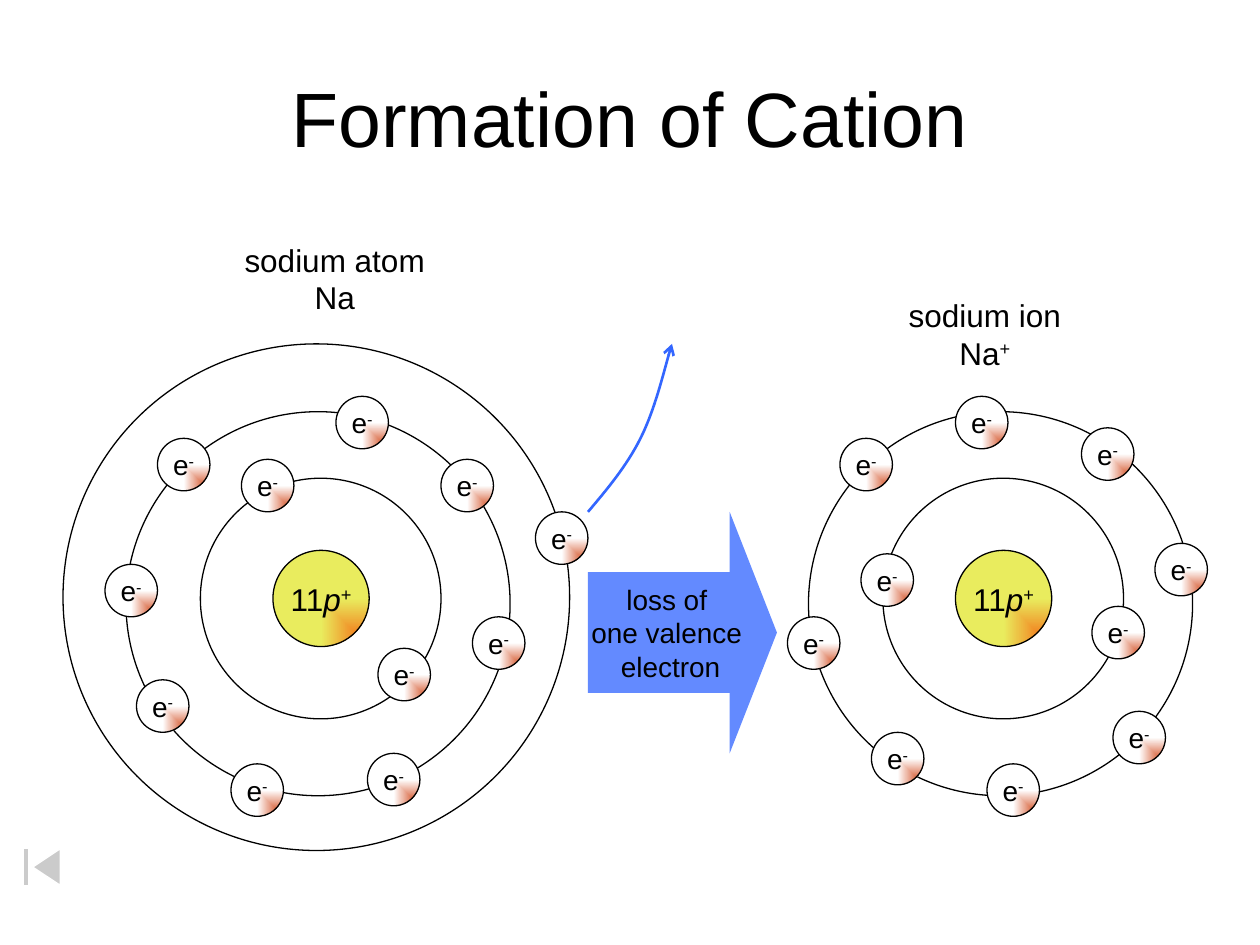
from dataclasses import dataclass

from lxml.etree import SubElement
from pptx import Presentation
from pptx.dml.color import RGBColor
from pptx.enum.shapes import MSO_SHAPE as Preset
from pptx.enum.text import MSO_ANCHOR as Anchor, MSO_AUTO_SIZE as AutoSize, PP_ALIGN as Align
from pptx.oxml.ns import qn
from pptx.util import Pt


@dataclass(frozen=True)
class Theme:
    font: str = "Arial"
    ink: str = "000000"
    paper: str = "FFFFFF"
    blue: str = "3366FF"
    electron: tuple = ("CC3300", "FFFFFF")
    nucleus: tuple = ("F55F0B", "E9EC5E")
    title_size: float = 44
    label_size: float = 18
    small_size: float = 16
    outline: float = 0.75
    curve: float = 1.5


def write_text(shape, lines, font, size, color, anchor=Anchor.MIDDLE, wrap=False):
    """Each line is a list of (text, style); style is "", "italic" or "super"."""
    frame = shape.text_frame
    frame.word_wrap = wrap
    frame.vertical_anchor = anchor
    for index, line in enumerate(lines):
        paragraph = frame.paragraphs[0] if index == 0 else frame.add_paragraph()
        paragraph.alignment = Align.CENTER
        for text, style in line:
            run = paragraph.add_run()
            run.text = text
            run.font.name = font
            run.font.size = Pt(size)
            run.font.color.rgb = RGBColor.from_string(color)
            if style == "italic":
                run.font.italic = True
            elif style == "super":
                run.font._element.set("baseline", "30000")


class AtomSlide:
    def __init__(self, slide, theme):
        self.slide = slide
        self.theme = theme
        self.shapes = slide.shapes

    def start_group(self):
        self.shapes = self.slide.shapes.add_group_shape().shapes

    def end_group(self):
        self.shapes = self.slide.shapes

    def text(self, shape, lines, size, **options):
        write_text(shape, lines, self.theme.font, size, self.theme.ink, **options)

    def label(self, box, lines, size, **options):
        shape = self.shapes.add_textbox(*map(Pt, box))
        self.text(shape, lines, size, **options)
        return shape

    def preset(self, kind, box, fill=None, alpha=100, line=None):
        shape = self.shapes.add_shape(kind, *map(Pt, box))
        shape.shadow.inherit = False
        if fill:
            shape.fill.solid()
            shape.fill.fore_color.rgb = RGBColor.from_string(fill)
            color = shape._element.spPr.find(qn("a:solidFill"))[0]
            SubElement(color, qn("a:alpha"), val=str(alpha * 1000))
        else:
            shape.fill.background()
        if line:
            shape.line.color.rgb = RGBColor.from_string(line)
            shape.line.width = Pt(self.theme.outline)
        else:
            shape.line.fill.background()
        return shape

    def circle(self, left, top, size):
        return self.preset(Preset.OVAL, (left, top, size, size), line=self.theme.ink)

    def ball(self, left, top, size, colors, runs, text_size):
        shape = self.circle(left, top, size)
        # Gradient spreading from the bottom right corner
        shape.fill.gradient()
        for stop, color, position in zip(shape.fill.gradient_stops, colors, (0, 1)):
            stop.color.rgb = RGBColor.from_string(color)
            stop.position = position
        gradient = shape._element.spPr.find(qn("a:gradFill"))
        gradient.remove(gradient.find(qn("a:lin")))
        path = SubElement(gradient, qn("a:path"), path="rect")
        SubElement(path, qn("a:fillToRect"), l="100000", t="100000")
        self.text(shape, [runs], text_size)

    def electron(self, left, top):
        self.ball(left, top, 30, self.theme.electron,
                  [("e", ""), ("-", "super")], self.theme.small_size)

    def nucleus(self, left, top):
        self.ball(left, top, 55, self.theme.nucleus,
                  [("11", ""), ("p", "italic"), ("+", "super")], self.theme.label_size)

    def curved_arrow(self, start, controls):
        builder = self.shapes.build_freeform(*map(Pt, start))
        builder.add_line_segments([(Pt(x), Pt(y)) for x, y in controls], close=False)
        shape = builder.convert_to_shape()
        shape.shadow.inherit = False
        shape.fill.background()
        shape.line.color.rgb = RGBColor.from_string(self.theme.blue)
        shape.line.width = Pt(self.theme.curve)
        # Turn every three points into one Bezier segment
        path = next(shape._element.iter(qn("a:path")))
        segments = path.findall(qn("a:lnTo"))
        for index in range(0, len(segments), 3):
            curve = SubElement(path, qn("a:cubicBezTo"))
            for segment in segments[index:index + 3]:
                curve.append(segment[0])
                path.remove(segment)
        SubElement(shape.line._get_or_add_ln(), qn("a:tailEnd"), type="arrow")

    def inner_shells(self, offset):
        self.circle(72 + offset, 235.25, 219.5)
        self.circle(114.5 + offset, 273.25, 137.5)
        self.nucleus(156 + offset, 314.5)


ATOM_ELECTRONS = [
    (138, 262.5), (216, 370.5),
    (192, 226.5), (252, 262.5), (90, 250.5), (60, 322.5),
    (78, 388.5), (132, 436.5), (210, 430.5), (270, 352.5),
    (306, 292.5),
]
ION_ELECTRONS = [
    (492, 316.5), (624, 346.5),
    (546, 226.5), (618, 244.5), (480, 250.5), (450, 352.5),
    (498, 418.5), (564, 436.5), (636, 406.5), (660, 310.5),
]
ION_OFFSET = 390


def main():
    presentation = Presentation()
    presentation.slide_width, presentation.slide_height = Pt(720), Pt(540)
    theme = Theme()
    page = AtomSlide(presentation.slides.add_slide(presentation.slide_layouts[6]), theme)

    # Title
    page.label((36, 21.6, 648, 90), [[("Formation of Cation", "")]],
               theme.title_size, wrap=True)

    # Sodium atom with its outer shell
    page.circle(36, 196.5, 289.5)
    page.inner_shells(0)
    atom_label = page.label((132.5, 134, 117.5, 50.5),
                            [[("sodium atom", "")], [("Na", "")]],
                            theme.label_size, anchor=Anchor.TOP)
    atom_label.text_frame.auto_size = AutoSize.SHAPE_TO_FIT_TEXT

    # Escape of the valence electron
    page.curved_arrow((336, 292.5), [(347, 279.5), (358, 266.5), (366, 250.5),
                                     (374, 234.5), (381, 206), (384, 196.5)])
    loss_arrow = page.preset(Preset.RIGHT_ARROW, (336, 292.5, 108, 138), theme.blue, 76)
    loss_arrow.adjustments[0] = 0.5
    loss_arrow.adjustments[1] = 0.25
    page.text(loss_arrow, [[("loss of ", "")], [("one valence ", "")], [("electron", "")]],
              theme.small_size)
    for position in ATOM_ELECTRONS:
        page.electron(*position)

    # Sodium ion
    page.start_group()
    ion_label = page.label((512, 165.5, 101.5, 50.5),
                           [[("sodium ion", "")], [("Na", ""), ("+", "super")]],
                           theme.label_size, anchor=Anchor.TOP)
    ion_label.text_frame.auto_size = AutoSize.SHAPE_TO_FIT_TEXT
    page.inner_shells(ION_OFFSET)
    for position in ION_ELECTRONS:
        page.electron(*position)
    page.end_group()

    # Back-to-start button
    page.preset(Preset.ACTION_BUTTON_BEGINNING, (0, 481.5, 48, 28),
                theme.paper, 50, theme.paper)

    presentation.save("out.pptx")


if __name__ == "__main__":
    main()
